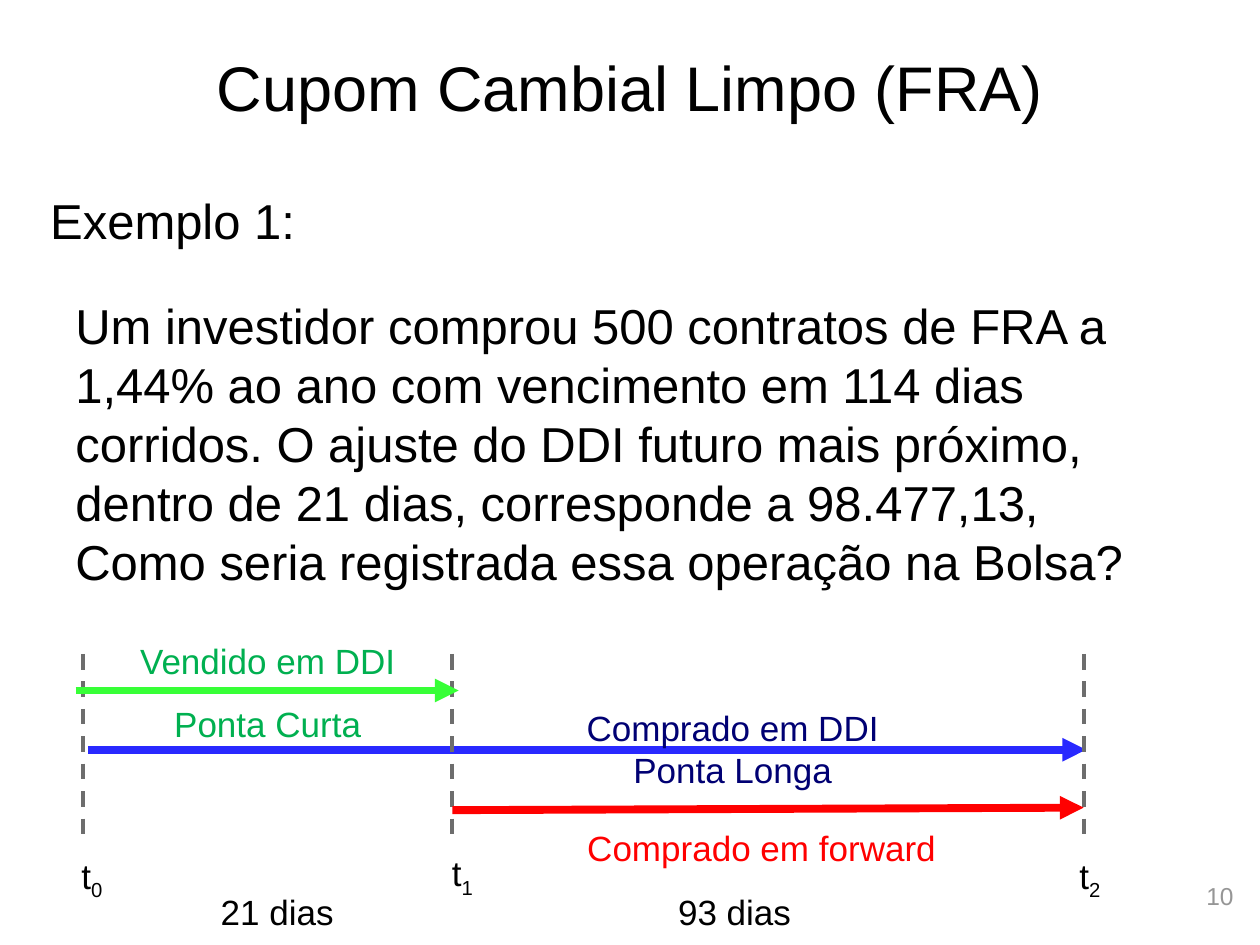
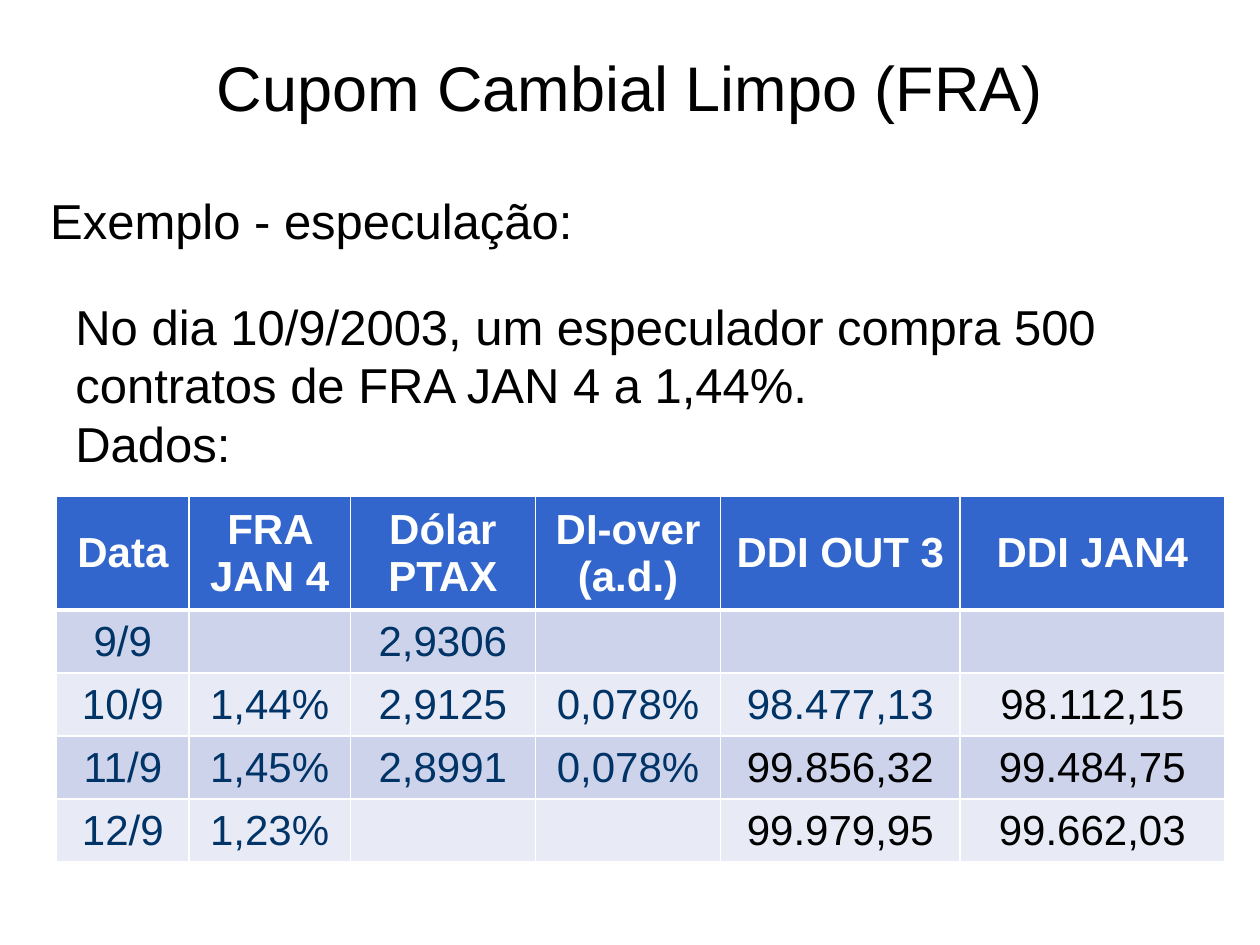
from dataclasses import dataclass

from lxml.etree import SubElement
from pptx import Presentation
from pptx.dml.color import RGBColor
from pptx.enum.dml import MSO_LINE
from pptx.enum.shapes import MSO_CONNECTOR
from pptx.enum.text import MSO_ANCHOR, MSO_AUTO_SIZE, PP_ALIGN
from pptx.oxml.ns import qn
from pptx.util import Inches, Pt


@dataclass(frozen=True)
class Theme:
    font: str = "Arial"
    black: str = "000000"
    white: str = "FFFFFF"
    gray: str = "969696"
    marker: str = "6D6D6D"
    long_arrow: str = "2929FF"
    long_text: str = "000073"
    short_arrow: str = "37FF37"
    short_text: str = "00B050"
    forward: str = "FF0000"
    header: str = "3366CC"
    bands: tuple = ("CED3EC", "E8EAF6")
    table_text: str = "003366"
    title_size: int = 36
    body_size: int = 28
    table_size: int = 24
    label_size: int = 20
    number_size: int = 14


THEME = Theme()

# Content
TITLE = "Cupom Cambial Limpo (FRA)"
TIMELINE = {
    "heading": "Exemplo 1:",
    "body": [
        "Um investidor comprou 500 contratos de FRA a 1,44% ao ano com "
        "vencimento em 114 dias corridos. O ajuste do DDI futuro mais próximo, "
        "dentro de 21 dias, corresponde a 98.477,13,",
        "Como seria registrada essa operação na Bolsa?",
    ],
    "number": "10",
}
SPECULATION = {
    "heading": "Exemplo - especulação:",
    "body": [
        "No dia 10/9/2003, um especulador compra 500 contratos de FRA JAN 4 "
        "a 1,44%.",
        "Dados:",
    ],
}
# Marker x positions on the time axis
T0, T1, T2 = 0.66, 3.59, 8.6
# Arrows: start, end, colour
LONG_ARROW = ((0.7, 5.95), (8.62, 5.95), THEME.long_arrow)
FRONT_ARROWS = [
    ((T1, 6.43), (T2, 6.41), THEME.forward),
    ((0.6, 5.48), (3.64, 5.48), THEME.short_arrow),
]
# Labels: left, top, width, height, colour, line spacing and text by line
LABELS = [
    (0.6, 5.03, 3.05, 0.94, THEME.short_text,
     [(1, "Vendido em DDI"), (1.5, "Ponta Curta")]),
    (4.29, 5.56, 3.05, 0.77, THEME.long_text,
     [(1, "Comprado em DDI"), (1, "Ponta Longa")]),
    (4.29, 6.34, 3.51, 0.61, THEME.forward, [(1.5, "Comprado em forward")]),
    (1.51, 6.85, 1.38, 0.61, THEME.black, [(1.5, "21 dias")]),
    (5.14, 6.85, 1.38, 0.61, THEME.black, [(1.5, "93 dias")]),
]
# Time marks: left, top, subscript
TIME_MARKS = [(0.5, 6.54, "0"), (3.44, 6.52, "1"), (8.42, 6.54, "2")]

QUOTES = [
    ["Data", "FRA JAN 4", "Dólar PTAX", "DI-over\n(a.d.)", "DDI OUT 3", "DDI JAN4"],
    ["9/9", "", "2,9306", "", "", ""],
    ["10/9", "1,44%", "2,9125", "0,078%", "98.477,13", "98.112,15"],
    ["11/9", "1,45%", "2,8991", "0,078%", "99.856,32", "99.484,75"],
    ["12/9", "1,23%", "", "", "99.979,95", "99.662,03"],
]
BLACK_QUOTES = {"98.112,15", "99.856,32", "99.484,75", "99.979,95", "99.662,03"}
COLUMN_WIDTHS = [1.05, 1.28, 1.47, 1.47, 1.9, 2.1]
HEADER_HEIGHT, ROW_HEIGHT = 0.9, 0.5


# Text
def write(frame, lines, size=THEME.body_size, color=THEME.black, bold=False,
          align=PP_ALIGN.LEFT, subscript="", spacings=None):
    """Fill a text frame with one paragraph per line, in one format."""
    for index, line in enumerate(lines):
        para = frame.paragraphs[0] if index == 0 else frame.add_paragraph()
        para.alignment = align
        if spacings:
            para.line_spacing = float(spacings[index])
        for text in filter(None, (line, subscript)):
            span = para.add_run()
            span.text = text
            span.font.name = THEME.font
            span.font.size = Pt(size)
            span.font.bold = bold
            span.font.color.rgb = RGBColor.from_string(color)
            if text is subscript:
                span.font._element.set("baseline", "-25000")


def add_text(page, left, top, width, height, lines, **style):
    box = page.shapes.add_textbox(
        Inches(left), Inches(top), Inches(width), Inches(height))
    box.text_frame.word_wrap = True
    write(box.text_frame, lines, **style)


# Lines
def add_line(page, start, end, color, width, dashed=False, arrow=False):
    line = page.shapes.add_connector(
        MSO_CONNECTOR.STRAIGHT, *(Inches(value) for value in start + end))
    line.line.color.rgb = RGBColor.from_string(color)
    line.line.width = Pt(width)
    if dashed:
        line.line.dash_style = MSO_LINE.DASH
    if arrow:
        SubElement(line.line._get_or_add_ln(), qn("a:tailEnd"), type="triangle")
    SubElement(line._element.spPr, qn("a:effectLst"))


def add_arrow(page, start, end, color):
    add_line(page, start, end, color, 4.5, arrow=True)


# Table
def set_borders(cell, top, bottom):
    properties = cell._tc.get_or_add_tcPr()
    sides = {"a:lnL": 1, "a:lnR": 1, "a:lnT": top, "a:lnB": bottom}
    for index, (side, width) in enumerate(sides.items()):
        border = SubElement(properties, qn(side), w=str(Pt(width)))
        fill = SubElement(border, qn("a:solidFill"))
        SubElement(fill, qn("a:srgbClr"), val=THEME.white)
        properties.insert(index, border)


def add_quotes(page, left, top):
    height = HEADER_HEIGHT + ROW_HEIGHT * (len(QUOTES) - 1)
    table = page.shapes.add_table(
        len(QUOTES), len(COLUMN_WIDTHS), Inches(left), Inches(top),
        Inches(sum(COLUMN_WIDTHS)), Inches(height)).table
    for column, width in zip(table.columns, COLUMN_WIDTHS):
        column.width = Inches(width)
    for number, values in enumerate(QUOTES):
        header = number == 0
        table.rows[number].height = Inches(HEADER_HEIGHT if header else ROW_HEIGHT)
        background = THEME.header if header else THEME.bands[(number - 1) % 2]
        for position, value in enumerate(values):
            cell = table.cell(number, position)
            cell.vertical_anchor = MSO_ANCHOR.MIDDLE
            cell.fill.solid()
            cell.fill.fore_color.rgb = RGBColor.from_string(background)
            set_borders(cell, 3 if number == 1 else 1, 3 if header else 1)
            color = THEME.black if value in BLACK_QUOTES else THEME.table_text
            write(cell.text_frame, value.split("\n"), size=THEME.table_size,
                  color=THEME.white if header else color, bold=header,
                  align=PP_ALIGN.CENTER)


# Pages
def add_page(deck, content):
    page = deck.slides.add_slide(deck.slide_layouts.get_by_name("Title Only"))
    title = page.shapes.title
    title.left, title.top = Inches(0.5), Inches(0.3)
    title.width, title.height = Inches(9), Inches(0.77)
    title.text_frame.auto_size = MSO_AUTO_SIZE.NONE
    title.text_frame.vertical_anchor = MSO_ANCHOR.MIDDLE
    write(title.text_frame, [TITLE], size=THEME.title_size, align=PP_ALIGN.CENTER)
    add_text(page, 0.3, 1.46, 9.42, 1.04, [content["heading"]])
    add_text(page, 0.5, 2.3, 9.22, 2.46 if "number" in content else 1.51,
             content["body"])
    if "number" in content:
        add_text(page, 7.56, 6.94, 2.33, 0.52, [content["number"]],
                 size=THEME.number_size, color=THEME.gray, align=PP_ALIGN.RIGHT)
    return page


def draw_timeline(page):
    add_arrow(page, *LONG_ARROW)
    for x in (T0, T1, T2):
        add_line(page, (x, 5.19), (x, 6.64), THEME.marker, 2.25, dashed=True)
    for arrow in FRONT_ARROWS:
        add_arrow(page, *arrow)
    for left, top, width, height, color, rows in LABELS:
        spacings, lines = zip(*rows)
        add_text(page, left, top, width, height, lines, size=THEME.label_size,
                 color=color, align=PP_ALIGN.CENTER, spacings=spacings)
    for left, top, mark in TIME_MARKS:
        add_text(page, left, top, 0.46, 0.61, ["t"], size=THEME.label_size,
                 align=PP_ALIGN.CENTER, subscript=mark, spacings=[1.5])


def main():
    deck = Presentation()
    deck.slide_width, deck.slide_height = Inches(10), Inches(7.5)
    draw_timeline(add_page(deck, TIMELINE))
    add_quotes(add_page(deck, SPECULATION), 0.45, 3.94)
    deck.save("out.pptx")


if __name__ == "__main__":
    main()
